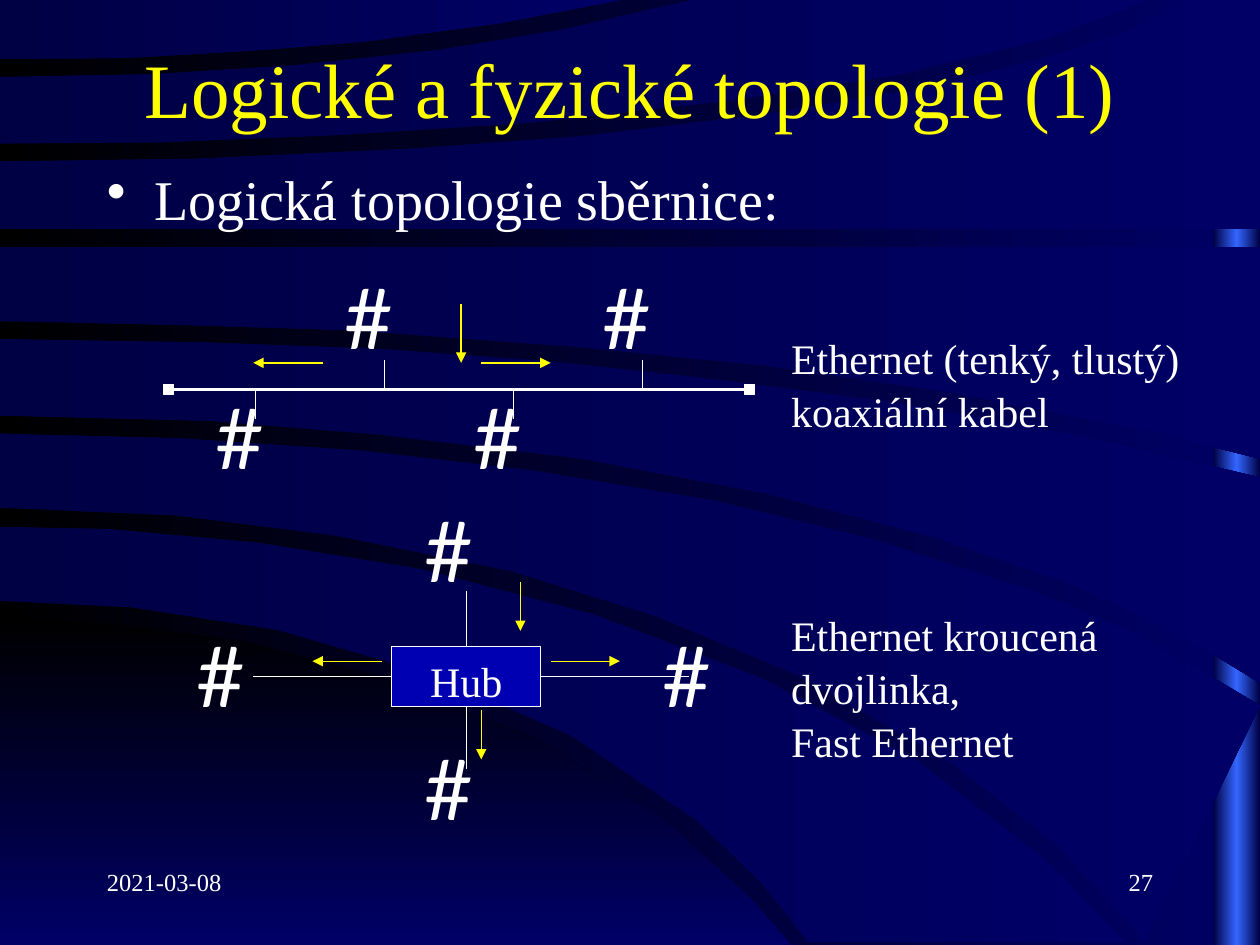
from dataclasses import dataclass

from lxml import etree
from pptx import Presentation
from pptx.dml.color import RGBColor
from pptx.enum.shapes import MSO_CONNECTOR, MSO_SHAPE
from pptx.enum.text import MSO_ANCHOR, MSO_AUTO_SIZE, PP_ALIGN
from pptx.oxml.ns import qn
from pptx.util import Inches, Pt

LEFT, CENTER, RIGHT = PP_ALIGN.LEFT, PP_ALIGN.CENTER, PP_ALIGN.RIGHT
TOP, MIDDLE = MSO_ANCHOR.TOP, MSO_ANCHOR.MIDDLE
RECTANGLE, STRAIGHT = MSO_SHAPE.RECTANGLE, MSO_CONNECTOR.STRAIGHT
FIT_SHAPE = MSO_AUTO_SIZE.SHAPE_TO_FIT_TEXT

COLUMNS, ROWS = 100, 75
CELL = Inches(0.1)


@dataclass(frozen=True)
class Theme:
    serif: str = "Times New Roman"
    symbol: str = "Lato"
    text: str = "FFFFFF"
    accent: str = "FFFF00"
    hub: str = "0000B2"
    black: str = "000000"
    deep: str = "000044"
    blue: str = "000066"
    glow: str = "3366FF"
    title_size: int = 44
    body_size: int = 32
    station_size: int = 48
    caption_size: int = 24
    footer_size: int = 14
    thin: float = 0.75
    thick: float = 1.5
    leading: float = 1.05


@dataclass(frozen=True)
class Box:
    """Area in grid columns and rows."""
    left: float
    top: float
    width: float
    height: float

    def emu(self):
        return [cells(n) for n in (self.left, self.top, self.width, self.height)]

    def point(self, x, y):
        return self.left + x, self.top + y


THEME = Theme()

# Upper and lower edge of each curved band, in columns and rows.
BANDS = [
    ([(0, 41.8), (8.7, 42), (20.6, 43.1), (33.5, 45.2), (47.2, 48.8), (60.6, 53.9),
      (72.7, 60.3), (83.3, 68.5), (89.3, 74.8)],
     [(0, 47.7), (10.5, 48.2), (22.1, 50), (34.2, 53.5), (45.4, 58.4), (55.3, 65.1),
      (60.4, 70), (64.2, 74.8)]),
    ([(0, 34.4), (14.4, 34.8), (28.9, 35.8), (42.6, 37.4), (57, 39.8), (69.3, 42.8),
      (81.8, 46.8), (90.4, 50.3), (100, 56)],
     [(0, 40.3), (14, 40.9), (26.7, 42.5), (40.5, 45.3), (52.1, 48.9), (63.6, 53.7),
      (75.6, 60.6), (83.8, 67), (90.9, 74.8)]),
    ([(0, 26.9), (16.8, 27.2), (30.1, 27.7), (43.8, 28.7), (56.6, 30.1), (71.4, 32),
      (85.9, 34.6), (100, 37.9)],
     [(0, 33), (16.7, 33.4), (30.3, 34.5), (46.2, 36.4), (61, 39.2), (74.3, 42.7),
      (85.3, 46.5), (95.1, 51.2), (100, 54.2)]),
    ([(0, 19.6), (100, 19.6)],
     [(0, 25.5), (14.7, 25.8), (27.8, 26.2), (45.5, 27.5), (60.7, 29), (75.8, 31.2),
      (91.5, 34.3), (100, 36.4)]),
    ([(0, 12.8), (15.7, 12.6), (32.9, 11.8), (46.5, 10.8), (59.7, 9.2), (73.4, 7),
      (83.5, 4.4), (89.2, 2.5), (94.1, 0), (100, 0)],
     [(0, 18.2), (100, 18.2)]),
    ([(0, 6.1), (12.1, 5.9), (23.3, 5.2), (34.7, 4), (44.5, 2.4), (55, 0), (91.2, 0)],
     [(0, 11.4), (12.6, 11.3), (27, 10.7), (42.5, 9.7), (57.7, 8), (71.5, 5.9),
      (83, 3.1), (91.2, 0)]),
    ([(0, 0), (49.2, 0)],
     [(0, 4.7), (10.1, 4.6), (20.2, 4), (28.9, 3.3), (39.9, 1.8), (49.2, 0)]),
]
DOME = ([(0, 49.1), (8.6, 49.5), (19.3, 50.9), (30.5, 53.8), (42.5, 58.6), (52.8, 65.1),
         (59.6, 71.3), (62.8, 75)],
        [(0, 75), (62.5, 75)])


def cells(count):
    return round(count * CELL)


def color(code):
    return RGBColor.from_string(code)


def paint_gradient(fill, owner, codes, angle=0):
    fill.gradient()
    fill.gradient_angle = angle
    stops = owner.find(".//" + qn("a:gsLst"))
    stops.clear()
    for index, code in enumerate(codes):
        position = str(round(100000 * index / (len(codes) - 1)))
        stop = etree.SubElement(stops, qn("a:gs"), pos=position)
        etree.SubElement(stop, qn("a:srgbClr"), val=code)


def add_band(page, edges, codes, angle=0):
    upper, lower = edges
    outline = [(cells(x), cells(y)) for x, y in upper + lower[::-1]]
    builder = page.shapes.build_freeform(*outline[0], scale=1.0)
    builder.add_line_segments(outline[1:], close=True)
    band = builder.convert_to_shape()
    band.shadow.inherit = False
    band.line.fill.background()
    paint_gradient(band.fill, band.element, codes, angle)


def draw_backdrop(page, box):
    paint_gradient(page.background.fill, page.element, [THEME.black, THEME.blue])
    stripe = page.shapes.add_shape(
        RECTANGLE, *Box(box.width - 3.7, 0, 3.7, box.height).emu())
    stripe.shadow.inherit = False
    stripe.line.fill.background()
    paint_gradient(stripe.fill, stripe.element, [THEME.deep, THEME.glow, THEME.deep])
    add_band(page, DOME, [THEME.black, THEME.blue], angle=270)
    for edges in BANDS:
        add_band(page, edges, [THEME.deep, THEME.blue])


def write(frame, lines, size, font=THEME.serif, ink=THEME.text, align=LEFT,
          anchor=TOP, leading=None):
    frame.vertical_anchor = anchor
    for index, line in enumerate(lines):
        para = frame.add_paragraph() if index else frame.paragraphs[0]
        para.text = line
        para.alignment = align
        para.line_spacing = leading
        para.font.name, para.font.size = font, Pt(size)
        para.font.color.rgb = color(ink)


def add_text(page, box, lines, size, **style):
    frame = page.shapes.add_textbox(*box.emu()).text_frame
    frame.word_wrap = True
    write(frame, lines, size, **style)
    return frame


def add_block(page, box, fill):
    block = page.shapes.add_shape(RECTANGLE, *box.emu())
    block.shadow.inherit = False
    block.fill.solid()
    block.fill.fore_color.rgb = color(fill)
    block.line.color.rgb = color(THEME.text)
    block.line.width = Pt(THEME.thin)
    return block


def add_line(page, start, end, ink=THEME.text, width=THEME.thin):
    ends = [cells(n) for n in (*start, *end)]
    line = page.shapes.add_connector(STRAIGHT, *ends)
    line.line.color.rgb = color(ink)
    line.line.width = Pt(width)
    etree.SubElement(line.element.spPr, qn("a:effectLst"))
    return line


def add_arrow(page, start, end):
    arrow = add_line(page, start, end, THEME.accent)
    etree.SubElement(arrow.element.spPr.find(qn("a:ln")), qn("a:tailEnd"), type="triangle")


def add_station(page, corner):
    frame = add_text(page, Box(*corner, 8.7, 9), ["#"], THEME.station_size,
                     font=THEME.symbol)
    frame.word_wrap = False
    frame.auto_size = FIT_SHAPE


def place_title(page, box):
    title = page.shapes.title
    page.shapes.element.append(title.element)  # in front of the backdrop
    title.left, title.top, title.width, title.height = box.emu()
    write(title.text_frame, ["Logické a fyzické topologie (1)"], THEME.title_size,
          ink=THEME.accent, align=CENTER, anchor=MIDDLE)


def add_bullet(page, box, line):
    frame = add_text(page, box, [line], THEME.body_size, leading=THEME.leading)
    indent = cells(3.75)
    properties = frame.paragraphs[0]._p.get_or_add_pPr()
    properties.set("marL", str(indent))
    properties.set("indent", str(-indent))
    etree.SubElement(properties, qn("a:buChar"), char="•")


def draw_bus(page, box):
    axis, end, pitch = 10.3, 0.8, 10.23
    add_line(page, box.point(end, axis), box.point(box.width - end, axis),
             width=THEME.thick)
    for x in (0, box.width - end):
        add_block(page, Box(*box.point(x, axis - end / 2), end, end), THEME.text)
    for index in range(4):
        x = 7.3 + index * pitch
        above = index % 2
        add_line(page, box.point(x, axis),
                 box.point(x, axis + (-2.35 if above else 2.35)))
        add_station(page, box.point(x - 4.15, 0 if above else 9.5))
    add_arrow(page, box.point(23.6, 3.5), box.point(23.6, 8.2))
    for start, finish in ((25.2, 30.7), (12.6, 7.1)):
        add_arrow(page, box.point(start, 8.2), box.point(finish, 8.2))


def draw_star(page, box):
    hub = Box(*box.point(16.5, 12.2), 11.8, 4.75)
    x, y = hub.point(hub.width / 2, hub.height / 2)
    block = add_block(page, hub, THEME.hub)
    write(block.text_frame, ["Hub"], THEME.caption_size, align=CENTER,
          leading=THEME.leading)
    for corner in ((37, 9.9), (18.1, 18.9), (0, 9.9), (18.1, 0)):
        add_station(page, box.point(*corner))
    right, bottom = hub.left + hub.width, hub.top + hub.height
    add_line(page, (x, hub.top - 4.4), (x, hub.top))
    add_line(page, (x, bottom), (x, bottom + 5))
    add_line(page, (right, y), (right + 11.8, y))
    add_line(page, (hub.left, y), (hub.left - 11, y))
    for rise in (-7.5, 2.7):
        column = x + (4.3 if rise < 0 else 1.2)
        add_arrow(page, (column, y + rise), (column, y + rise + 3.9))
    for start, finish in ((right + 0.8, right + 6.3), (hub.left - 0.8, hub.left - 6.3)):
        add_arrow(page, (start, y - 1.2), (finish, y - 1.2))


def add_caption(page, box, lines):
    add_text(page, box, lines, THEME.caption_size, leading=THEME.leading)


def add_footer(page, box):
    part = 20.8
    add_text(page, Box(box.left, box.top, part, box.height), ["2021-03-08"],
             THEME.footer_size)
    add_text(page, Box(*box.point(box.width - part, 0), part, box.height), ["27"],
             THEME.footer_size, align=RIGHT)


def main():
    deck = Presentation()
    deck.slide_width, deck.slide_height = cells(COLUMNS), cells(ROWS)
    page = deck.slides.add_slide(deck.slide_layouts[5])
    draw_backdrop(page, Box(0, 0, COLUMNS, ROWS))
    add_footer(page, Box(7.5, 68.3, 85, 5))
    place_title(page, Box(7.5, 2.1, 85, 9.7))
    add_bullet(page, Box(7.5, 12.3, 85, 7.9), "Logická topologie sběrnice:")
    draw_bus(page, Box(13, 20.6, 46.9, 18.5))
    draw_star(page, Box(14.6, 39.1, 45.7, 27.9))
    add_caption(page, Box(61.8, 25.7, 33.9, 10.2),
                ["Ethernet (tenký, tlustý) koaxiální kabel"])
    add_caption(page, Box(61.8, 47.7, 33.9, 13.4),
                ["Ethernet kroucená dvojlinka,", "Fast Ethernet"])
    deck.save("out.pptx")


if __name__ == "__main__":
    main()
